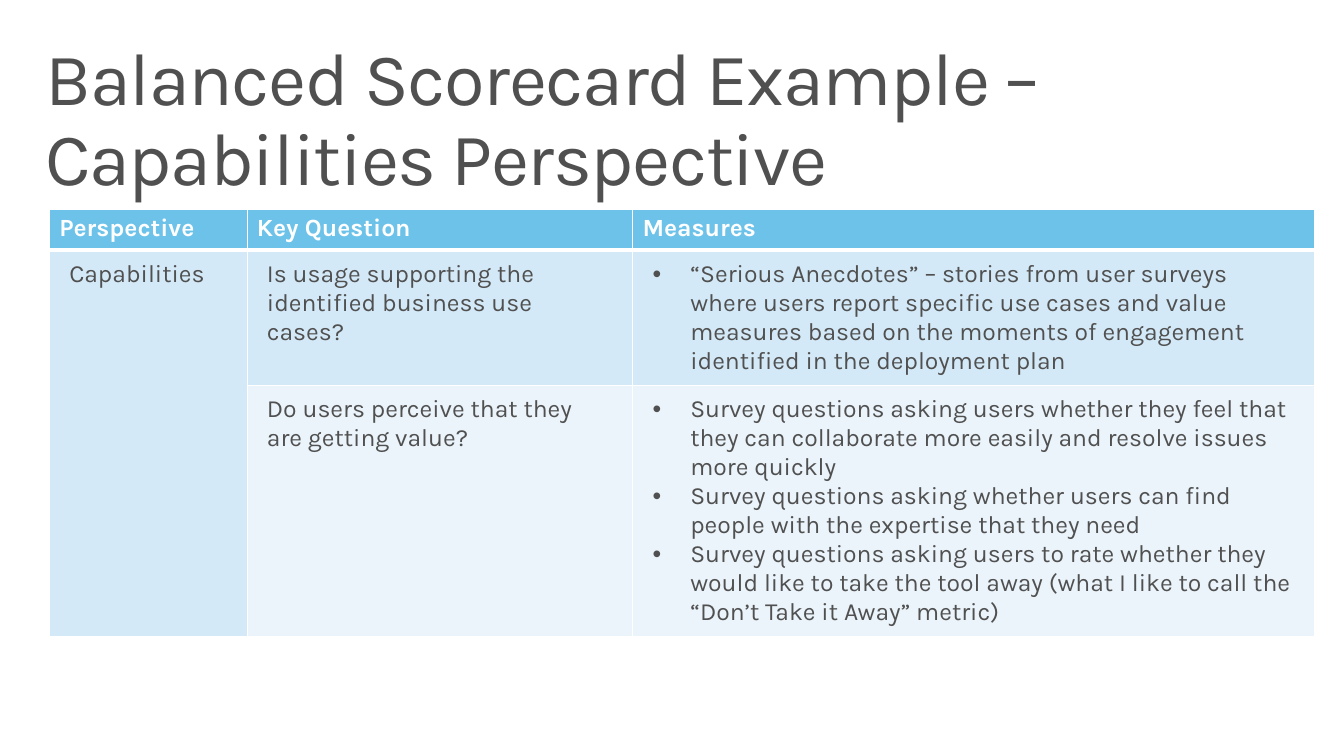
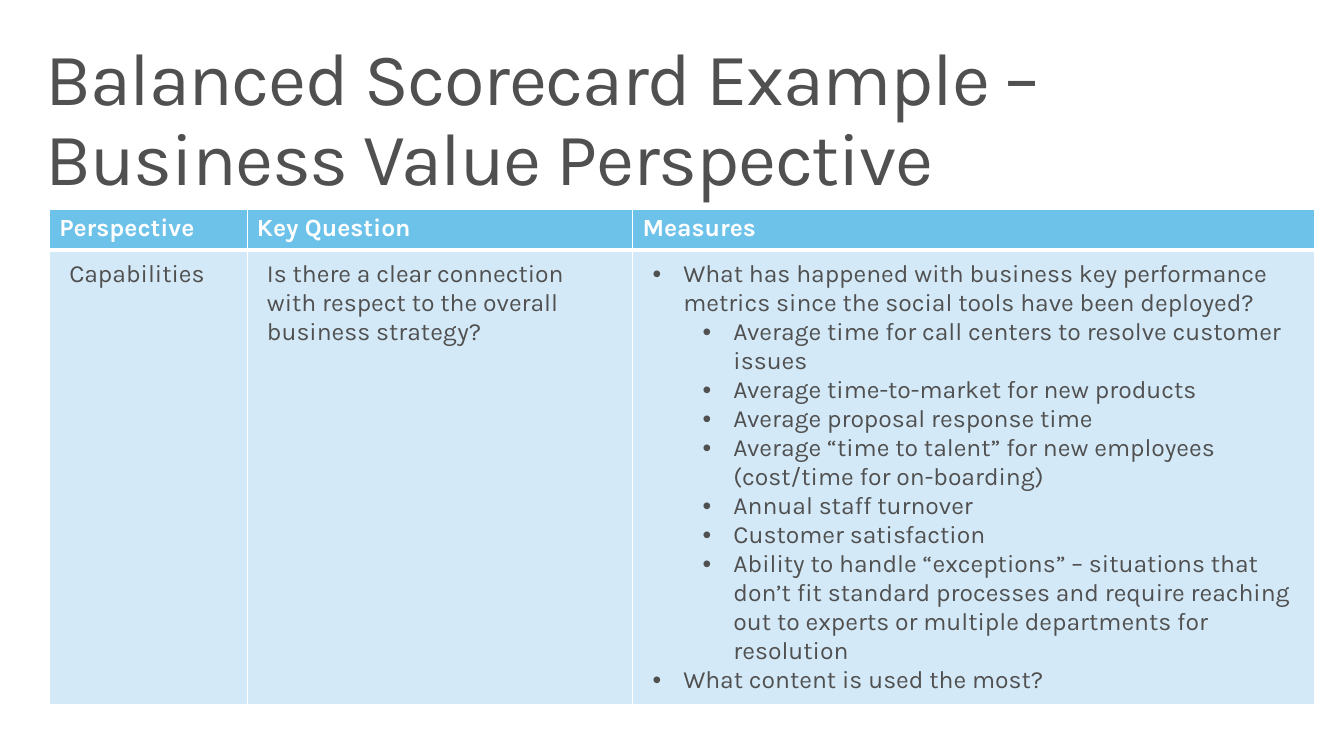
"""Build two balanced scorecard slides, each with a title and a table."""
from lxml import etree
from pptx import Presentation
from pptx import util as u
from pptx.dml import color
from pptx.enum import text
from pptx.oxml import ns

COLORS = {"text": "505050", "white": "FFFFFF", "header": "6DC2E9",
          "band": "D4E9F7", "light": "EBF4FB"}
FONT = "Karla"
HEADERS = ["Perspective", "Key Question", "Measures"]
COLUMNS = [5.08, 9.91, 17.53]
HEADER_HEIGHT = 1.04


class Deck:
    """Hold the shared style and the current slide."""

    def __init__(self):
        self.prs = Presentation()
        self.prs.slide_width, self.prs.slide_height = u.Cm(34.54), u.Cm(19.43)
        self.s = None

    def rgb(self, name):
        """Return the named colour."""
        return color.RGBColor.from_string(COLORS[name])

    def style(self, p, size, name, bold=False):
        """Format every run of a paragraph."""
        for r in p.runs:
            r.font.name, r.font.size, r.font.bold = FONT, u.Pt(size), bold
            r.font.color.rgb = self.rgb(name)

    def title(self, words):
        """Start a slide and set its title."""
        self.s = self.prs.slides.add_slide(self.prs.slide_layouts[5])
        sp = self.s.shapes.title
        sp.left, sp.top, sp.width, sp.height = map(u.Cm, (0.76, 0.81, 33.02, 2.54))
        tf = sp.text_frame
        tf.text = words
        tf.word_wrap, tf.auto_size = True, text.MSO_AUTO_SIZE.NONE
        tf.vertical_anchor = text.MSO_ANCHOR.TOP
        tf.margin_left = tf.margin_right = u.Cm(0.41)
        tf.margin_top = tf.margin_bottom = u.Cm(0.25)
        p = tf.paragraphs[0]
        p.alignment, p.line_spacing = text.PP_ALIGN.LEFT, 0.9
        self.style(p, 54, "text")
        p.runs[0].font._element.set("spc", "-100")

    def bullet(self, p, level, left, hang):
        """Give a paragraph a hanging bullet."""
        p.level = level
        pPr = p._p.get_or_add_pPr()
        pPr.set("marL", str(u.Cm(left)))
        pPr.set("indent", str(-u.Cm(hang)))
        etree.SubElement(pPr, ns.qn("a:buFont")).set("typeface", "Arial")
        etree.SubElement(pPr, ns.qn("a:buChar")).set("char", "•")

    def borders(self, cell, top=1, bottom=1):
        """Draw white lines around a cell."""
        tcPr = cell._tc.get_or_add_tcPr()
        sides = {"L": 1, "R": 1, "T": top, "B": bottom}
        for i, (side, width) in enumerate(sides.items()):
            ln = etree.Element(ns.qn(f"a:ln{side}"), w=str(u.Pt(width)))
            fill = etree.SubElement(ln, ns.qn("a:solidFill"))
            etree.SubElement(fill, ns.qn("a:srgbClr")).set("val", COLORS["white"])
            tcPr.insert(i, ln)

    def fill(self, cell, name):
        """Fill a cell with the named colour."""
        cell.fill.solid()
        cell.fill.fore_color.rgb = self.rgb(name)

    def body_cell(self, cell, items, indents=None):
        """Write the paragraphs of a body cell, bulleted if indents are given."""
        cell.margin_left = cell.margin_right = u.Cm(0.51)
        cell.margin_top = cell.margin_bottom = u.Cm(0.25)
        tf = cell.text_frame
        for i, (level, words) in enumerate(items):
            p = tf.add_paragraph() if i else tf.paragraphs[0]
            p.text = words
            if indents:
                self.bullet(p, level, indents[level], indents[0])
            self.style(p, 18, "text")

    def table(self, perspective, rows, heights, indents):
        """Add a scorecard table whose first column spans all body rows."""
        heights = [HEADER_HEIGHT, *heights]
        frame = self.s.shapes.add_table(
            len(heights), len(COLUMNS), u.Cm(1.27), u.Cm(5.38),
            u.Cm(sum(COLUMNS)), u.Cm(sum(heights)))
        table = frame.table
        for column, width in zip(table.columns, COLUMNS):
            column.width = u.Cm(width)
        for row, height in zip(table.rows, heights):
            row.height = u.Cm(height)
        for cell, words in zip(table.rows[0].cells, HEADERS):
            cell.text = words
            self.style(cell.text_frame.paragraphs[0], 18, "white", True)
            self.fill(cell, "header")
            self.borders(cell, bottom=3)
        for i, (question, measures) in enumerate(rows, 1):
            first, key, measure = table.rows[i].cells
            self.body_cell(key, [(0, question)])
            self.body_cell(measure, measures, indents)
            band = "band" if i % 2 else "light"
            for cell, name in ((first, "band"), (key, band), (measure, band)):
                self.fill(cell, name)
                self.borders(cell, top=3 if i == 1 else 1)
        self.body_cell(table.cell(1, 0), [(0, perspective)])
        if len(rows) > 1:
            table.cell(1, 0).merge(table.cell(len(rows), 0))


def main():
    """Build and save the slides."""
    deck = Deck()
    deck.title("Balanced Scorecard Example – Capabilities Perspective")
    deck.table("Capabilities", [
        ("Is usage supporting the identified business use cases?", [
            (0, "“Serious Anecdotes” – stories from user surveys where users report "
                "specific use cases and value measures based on the moments of "
                "engagement identified in the deployment plan")]),
        ("Do users perceive that they are getting value?", [
            (0, "Survey questions asking users whether they feel that they can "
                "collaborate more easily and resolve issues more quickly"),
            (0, "Survey questions asking whether users can find people with the "
                "expertise that they need"),
            (0, "Survey questions asking users to rate whether they would like to "
                "take the tool away (what I like to call the “Don’t Take it Away” "
                "metric)")]),
    ], [3.45, 6.45], [0.97])

    deck.title("Balanced Scorecard Example – Business Value Perspective")
    deck.table("Capabilities", [
        ("Is there a clear connection with respect to the overall business strategy?", [
            (0, "What has happened with business key performance metrics since the "
                "social tools have been deployed?"),
            (1, "Average time for call centers to resolve customer issues"),
            (1, "Average time-to-market for new products"),
            (1, "Average proposal response time"),
            (1, "Average “time to talent” for new employees (cost/time for on-boarding)"),
            (1, "Annual staff turnover"),
            (1, "Customer satisfaction"),
            (1, "Ability to handle “exceptions” – situations that don’t fit standard "
                "processes and require reaching out to experts or multiple "
                "departments for resolution"),
            (0, "What content is used the most?")]),
    ], [11.6], [0.79, 2.08])
    deck.prs.save("out.pptx")


if __name__ == "__main__":
    main()
